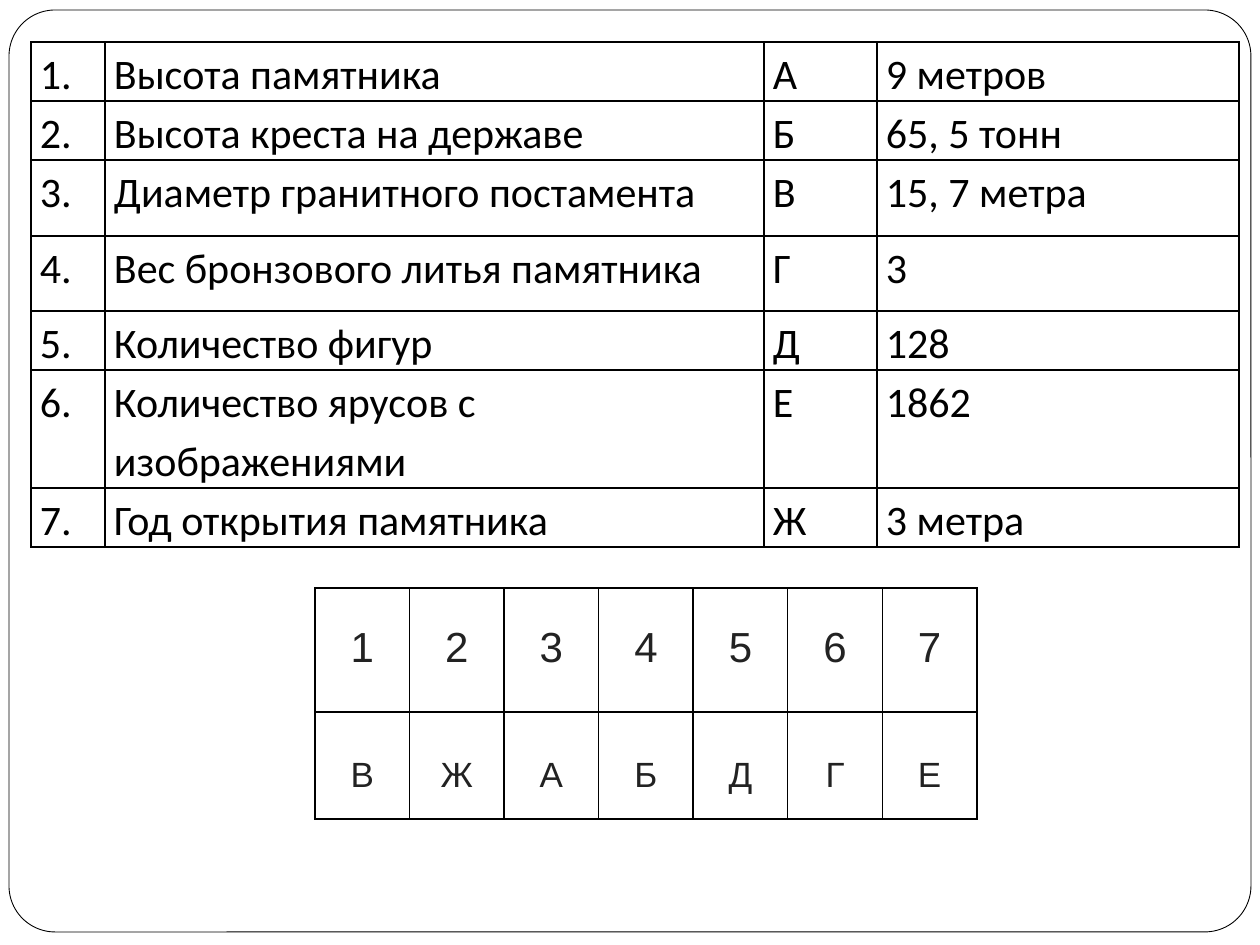
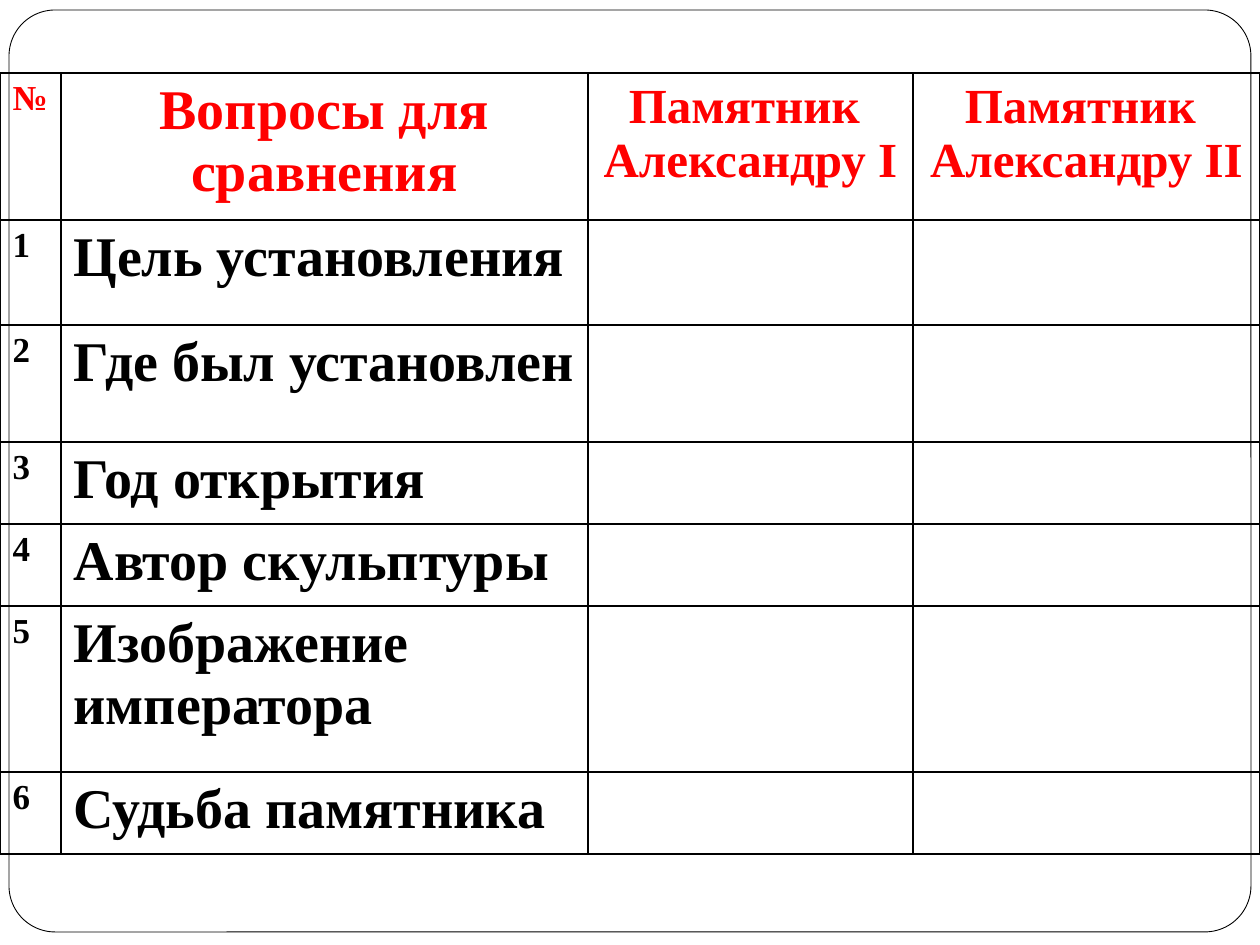
from lxml.etree import SubElement
from pptx import Presentation
from pptx.dml.color import RGBColor
from pptx.enum.shapes import MSO_SHAPE
from pptx.enum.text import PP_ALIGN
from pptx.oxml.ns import qn
from pptx.util import Emu, Pt

PX = 914400 / 126
COLORS = {"paper": "FFFFFF", "ink": "000000", "answer": "222222", "heading": "FF0000"}

# Content
FACTS = [
    ("1.", "Высота памятника", "А", "9 метров"),
    ("2.", "Высота креста на державе", "Б", "65, 5 тонн"),
    ("3.", "Диаметр гранитного постамента", "В", "15, 7 метра"),
    ("4.", "Вес бронзового литья памятника", "Г", "3"),
    ("5.", "Количество фигур", "Д", "128"),
    ("6.", "Количество ярусов с изображениями", "Е", "1862"),
    ("7.", "Год открытия памятника", "Ж", "3 метра"),
]
ANSWERS = ["1234567", "ВЖАБДГЕ"]
HEADINGS = ("№", "Вопросы для сравнения", "Памятник \nАлександру I", "Памятник \nАлександру II")
QUESTIONS = ["Цель установления", "Где был установлен", "Год открытия",
             "Автор скульптуры", "Изображение императора", "Судьба памятника"]
COMPARISON = [HEADINGS] + [(str(n), question, "", "")
                           for n, question in enumerate(QUESTIONS, 1)]

# Sizes in px
FRAME = (9, 10, 1242, 922)
FRAME_ROUNDING = 0.05
FACT_COLUMNS = [74, 659, 113, 362]
FACT_ROWS = [59, 59, 76, 75, 59, 118, 59]
ANSWER_COLUMNS = [662 / 7] * 7
ANSWER_ROWS = [124, 107]
COMPARISON_COLUMNS = [61, 527, 325, 347]
COMPARISON_ROWS = [147, 105, 117, 82, 82, 166, 82]


def px(length):
    return Emu(round(length * PX))


def color(name):
    return RGBColor.from_string(COLORS[name])


# Text styles by row and column
def fact_style(row, column):
    return {"font": "Calibri", "size": 24, "color": "ink", "spacing": 1.15}


def answer_style(row, column):
    return {"font": "Arial", "size": (24, 20)[row], "color": "answer",
            "align": PP_ALIGN.CENTER, "spacing": Pt(17.8)}


def comparison_style(row, column):
    heading = row == 0
    if column == 0:
        align = PP_ALIGN.JUSTIFY
    else:
        align = PP_ALIGN.CENTER if heading else PP_ALIGN.LEFT
    return {"font": "Times New Roman", "size": (20, 32, 28, 28)[column], "bold": True,
            "color": "heading" if heading else "ink", "align": align}


def add_frame(slide):
    frame = slide.shapes.add_shape(MSO_SHAPE.ROUNDED_RECTANGLE, *map(px, FRAME))
    frame.adjustments[0] = FRAME_ROUNDING
    frame.shadow.inherit = False
    frame.fill.solid()
    frame.fill.fore_color.rgb = color("paper")
    frame.line.color.rgb = color("ink")
    frame.line.width = Pt(0.5)


def add_borders(cell):
    properties = cell._tc.get_or_add_tcPr()
    for index, side in enumerate(("lnL", "lnR", "lnT", "lnB")):
        line = SubElement(properties, qn("a:" + side), w=str(Pt(1)))
        SubElement(SubElement(line, qn("a:solidFill")), qn("a:srgbClr"), val=COLORS["ink"])
        properties.insert(index, line)


def write(cell, text, style):
    cell.text_frame.text = text
    for paragraph in cell.text_frame.paragraphs:
        paragraph.alignment = style.get("align", PP_ALIGN.LEFT)
        paragraph.line_spacing = style.get("spacing")
        for run in paragraph.runs:
            run.font.name = style["font"]
            run.font.size = Pt(style["size"])
            run.font.bold = style.get("bold", False)
            run.font.color.rgb = color(style["color"])


def add_grid(slide, left, top, columns, rows, content, style_at, margins=None):
    """Margins are left, top, right and bottom."""
    grid = slide.shapes.add_table(len(rows), len(columns), px(left), px(top),
                                  px(sum(columns)), px(sum(rows))).table
    grid.first_row = grid.horz_banding = False
    for column, width in zip(grid.columns, columns):
        column.width = px(width)
    for row, height in zip(grid.rows, rows):
        row.height = px(height)
    for r, texts in enumerate(content):
        for c, text in enumerate(texts):
            cell = grid.cell(r, c)
            if margins:
                (cell.margin_left, cell.margin_top,
                 cell.margin_right, cell.margin_bottom) = map(px, margins)
            cell.fill.background()
            add_borders(cell)
            write(cell, text, style_at(r, c))


def main():
    deck = Presentation()
    deck.slide_width, deck.slide_height = px(1260), px(945)
    matching, comparing = (deck.slides.add_slide(deck.slide_layouts[6]) for _ in range(2))
    for slide in (matching, comparing):
        add_frame(slide)

    # Matching task and its answers
    add_grid(matching, 31, 42, FACT_COLUMNS, FACT_ROWS, FACTS, fact_style, (9, 0, 9, 0))
    add_grid(matching, 315, 588, ANSWER_COLUMNS, ANSWER_ROWS, ANSWERS, answer_style,
             (9, 52, 9, 0))

    # Comparison of the two monuments
    add_grid(comparing, 0, 73, COMPARISON_COLUMNS, COMPARISON_ROWS, COMPARISON,
             comparison_style)
    deck.save("out.pptx")


if __name__ == "__main__":
    main()
